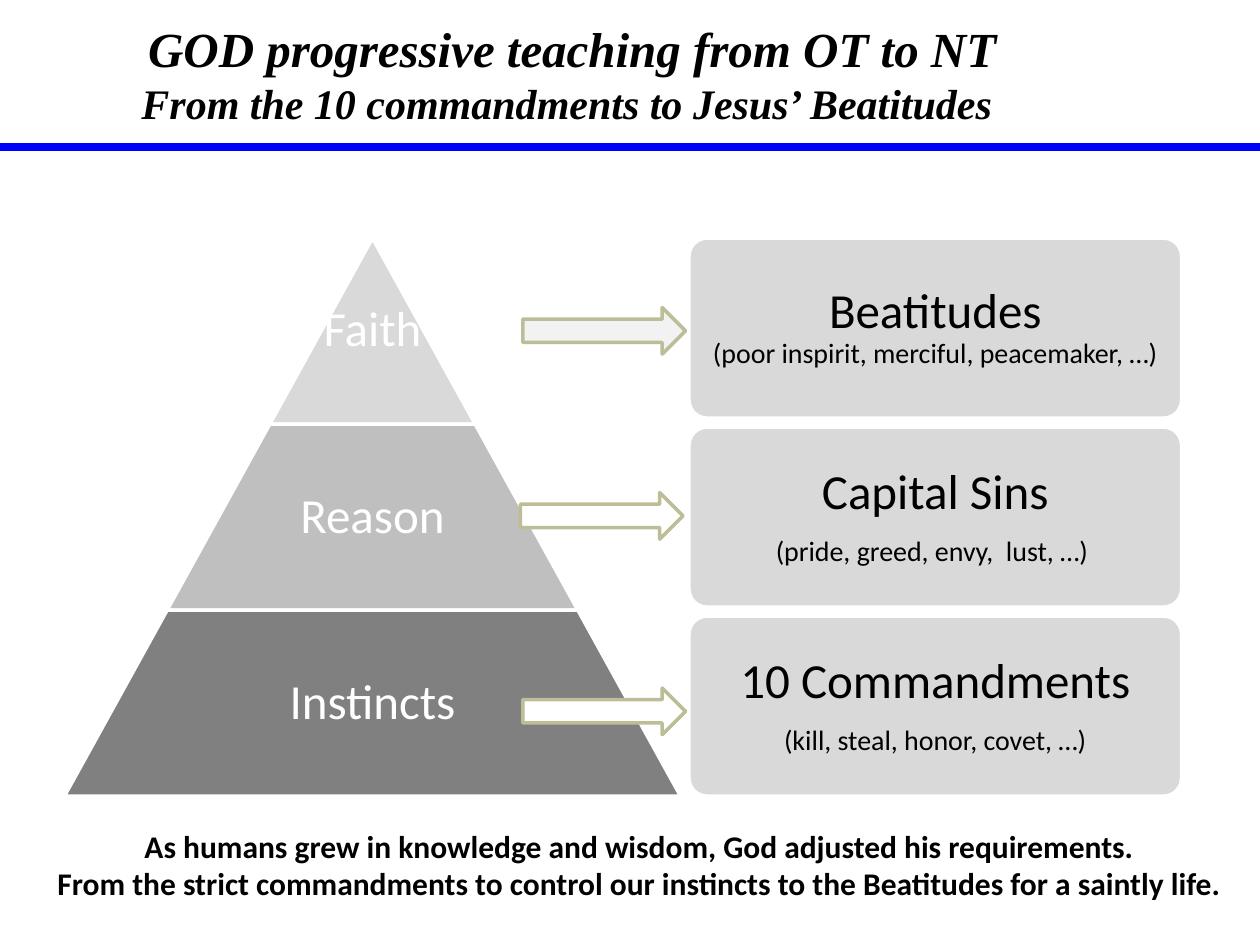
from dataclasses import dataclass

from lxml import etree
from pptx import Presentation
from pptx import util as u
from pptx.dml.color import RGBColor
from pptx.enum import shapes, text
from pptx.oxml import ns


@dataclass(frozen=True)
class Theme:
    title_font: str = "Times New Roman"
    body_font: str = "Calibri"
    black: str = "000000"
    white: str = "FFFFFF"
    rule: str = "0000FF"
    card: str = "D9D9D9"
    arrow_line: str = "BDBD97"
    pale_arrow: str = "F2F2F2"
    tiers: tuple = ("D9D9D9", "BFBFBF", "808080")
    title: int = 28
    subtitle: int = 24
    label: int = 28
    detail: int = 16
    footer: int = 18


THEME = Theme()


def color(code):
    return RGBColor.from_string(code)


def place(*lengths):
    return [u.Cm(length) for length in lengths]


def write(shape, paragraphs, ink, font=THEME.body_font, bold=False, italic=False,
          inset=None, spaced=False, wrap=True, anchor=text.MSO_ANCHOR.MIDDLE):
    frame = shape.text_frame
    frame.word_wrap = wrap
    frame.vertical_anchor = anchor
    if inset is not None:
        frame.margin_left = frame.margin_right = u.Cm(inset)
        frame.margin_top = frame.margin_bottom = u.Cm(inset)
    for index, lines in enumerate(paragraphs):
        para = frame.add_paragraph() if index else frame.paragraphs[0]
        para.alignment = text.PP_ALIGN.CENTER
        if spaced:
            para.line_spacing = 0.9
            para.space_after = u.Pt(10)
        para.font.name = font
        para.font.bold = bold
        para.font.italic = italic
        para.font.color.rgb = color(ink)
        for number, (words, size) in enumerate(lines):
            if number:
                para.add_line_break()
            span = para.add_run()
            span.text = words
            span.font.size = u.Pt(size)
            span.font.name = font
            span.font.bold = bold
            span.font.italic = italic
            span.font.color.rgb = color(ink)


def add_block(page, kind, box, fill, line, adjustment=None):
    block = page.shapes.add_shape(kind, *place(*box))
    block.shadow.inherit = False
    block.fill.solid()
    block.fill.fore_color.rgb = color(fill)
    block.line.color.rgb = color(line)
    block.line.width = u.Pt(2)
    if adjustment is not None:
        block.adjustments[0] = adjustment
    return block


def add_rule(page):
    rule = page.shapes.add_connector(
        shapes.MSO_CONNECTOR.STRAIGHT, *place(0, 2.97, 25.4, 2.97))
    rule.line.color.rgb = color(THEME.rule)
    rule.line.width = u.Pt(4.5)
    etree.SubElement(rule._element.spPr, ns.qn("a:effectLst"))


def add_title(page):
    box = page.shapes.add_textbox(*place(0.69, 0.51, 21.69, 1.93))
    lines = [("GOD progressive teaching from OT to NT", THEME.title),
             ("From the 10 commandments to Jesus’ Beatitudes ", THEME.subtitle)]
    write(box, [lines], THEME.black, THEME.title_font, bold=True, italic=True)


def add_pyramid(page, labels):
    center, top, height, step = 7.51, 4.8, 3.75, 4.14
    for index, (label, fill) in enumerate(zip(labels, THEME.tiers)):
        width = step * (index + 1)
        box = (center - width / 2, top + index * height, width, height)
        add_block(page, shapes.MSO_SHAPE.TRAPEZOID, box, fill, THEME.white, 0.552)
        caption = page.shapes.add_textbox(*place(*box))
        write(caption, [[(label, THEME.label)]], THEME.white, inset=0.1, spaced=True)


def add_cards(page, cards):
    for index, paragraphs in enumerate(cards):
        box = (13.89, 4.8 + index * 3.81, 9.93, 3.63)
        card = add_block(page, shapes.MSO_SHAPE.ROUNDED_RECTANGLE, box,
                         THEME.card, THEME.white, 0.1)
        write(card, paragraphs, THEME.black, inset=0.3, spaced=True)


def add_arrows(page):
    arrows = [(10.54, 6.2, THEME.pale_arrow),
              (10.49, 9.93, THEME.white),
              (10.54, 13.87, THEME.white)]
    for left, top, fill in arrows:
        add_block(page, shapes.MSO_SHAPE.RIGHT_ARROW, (left, top, 3.28, 0.94),
                  fill, THEME.arrow_line)


def add_footer(page):
    box = page.shapes.add_textbox(*place(0.89, 16.54, 24, 1.8))
    sentences = [
        "As humans grew in knowledge and wisdom, God adjusted his requirements.",
        "From the strict commandments to control our instincts to the Beatitudes "
        "for a saintly life.",
    ]
    write(box, [[(sentence, THEME.footer)] for sentence in sentences], THEME.black,
          bold=True, wrap=False, anchor=text.MSO_ANCHOR.TOP)


def main():
    deck = Presentation()
    deck.slide_width, deck.slide_height = place(25.4, 19.05)
    page = deck.slides.add_slide(deck.slide_layouts[6])
    add_rule(page)
    add_title(page)
    add_pyramid(page, ["Faith", "Reason", "Instincts"])
    add_cards(page, [
        [[("Beatitudes", THEME.label),
          ("(poor inspirit, merciful, peacemaker, …)", THEME.detail)]],
        [[("Capital Sins", THEME.label)],
         [("(pride, greed, envy,  lust, …) ", THEME.detail)]],
        [[("10 Commandments", THEME.label)],
         [("(kill, steal, honor, covet, …)", THEME.detail)]],
    ])
    add_arrows(page)
    add_footer(page)
    deck.save("out.pptx")


if __name__ == "__main__":
    main()
